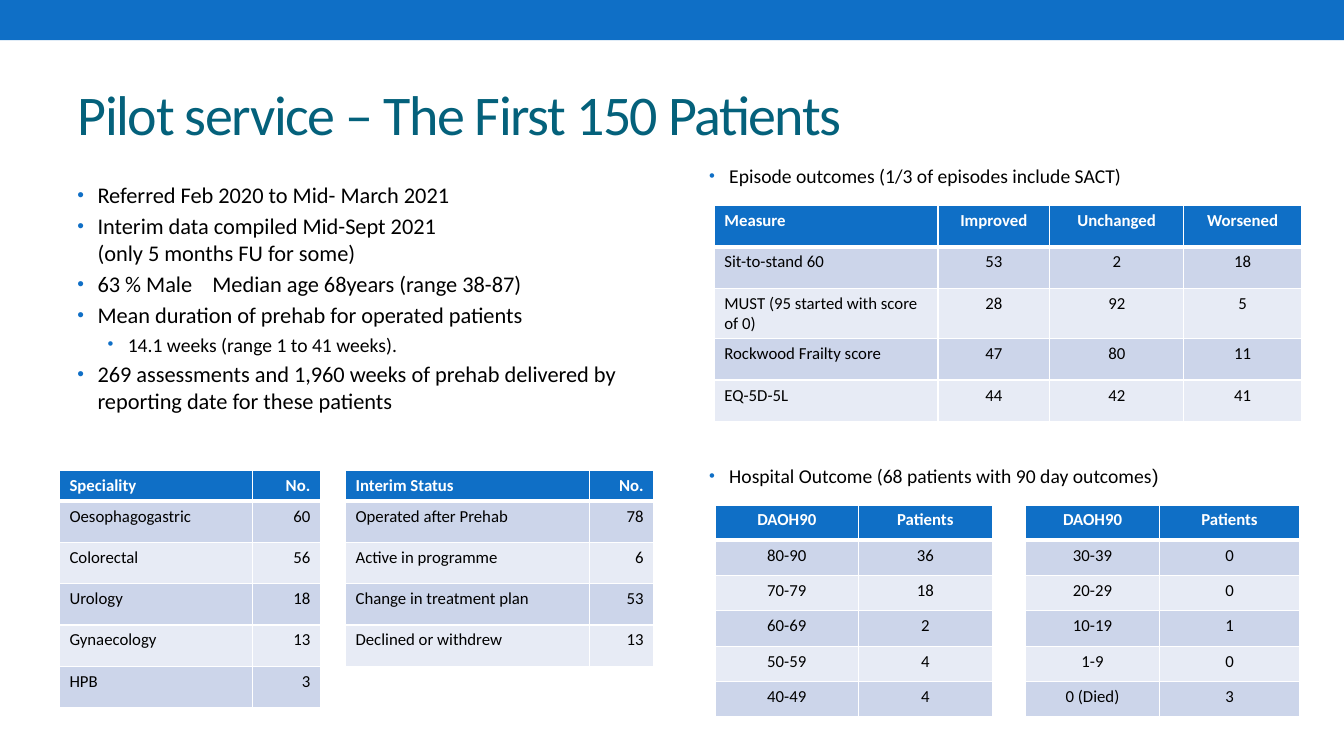
"""Build the slide on the first 150 patients of the pilot service."""
from dataclasses import dataclass

from lxml.etree import SubElement
from pptx import Presentation
from pptx.dml.color import RGBColor
from pptx.enum.shapes import MSO_SHAPE as Shape
from pptx.enum.text import MSO_ANCHOR as Anchor, PP_ALIGN as Align
from pptx.oxml.ns import qn
from pptx.util import Inches, Pt


@dataclass(frozen=True)
class Theme:
    blue: str = "0F6FC6"
    teal: str = "04617B"
    black: str = "000000"
    white: str = "FFFFFF"
    bands: tuple = ("CCD5EA", "E7EBF5")
    font: str = "Calibri"
    bracket_font: str = "Arial"
    title: int = 40
    point: int = 16
    detail: int = 14
    cell: int = 12


theme = Theme()


def write(paragraph, text, size, color=theme.black, bold=False, font=theme.font):
    """Add one formatted run."""
    run = paragraph.add_run()
    run.text = text
    run.font.name = font
    run.font.size = Pt(size)
    run.font.bold = bold
    run.font.color.rgb = RGBColor.from_string(color)
    return run


def set_bullet(paragraph, indent, before):
    """Give a paragraph its hanging bullet and the space above it."""
    paragraph.space_before = Pt(before)
    props = paragraph._p.get_or_add_pPr()
    props.set("marL", str(Inches(indent)))
    props.set("indent", str(Inches(-0.2)))
    SubElement(SubElement(props, qn("a:buClr")), qn("a:srgbClr"), val=theme.blue)
    SubElement(props, qn("a:buSzPct"), val="85000")
    SubElement(props, qn("a:buFont"), typeface=theme.bracket_font)
    SubElement(props, qn("a:buChar"), char="•")
    return props


deck = Presentation()
deck.slide_width, deck.slide_height = Inches(13.34), Inches(7.5)
slide = deck.slides.add_slide(deck.slide_layouts[5])

banner = slide.shapes.add_shape(Shape.RECTANGLE, 0, 0, deck.slide_width, Inches(0.4))
banner.shadow.inherit = False
banner.fill.solid()
banner.fill.fore_color.rgb = RGBColor.from_string(theme.blue)
banner.line.fill.background()

heading = slide.shapes.title
heading.left, heading.top = Inches(0.67), Inches(0.58)
heading.width, heading.height = Inches(12), Inches(1.08)
heading.text_frame.vertical_anchor = Anchor.MIDDLE
heading_line = heading.text_frame.paragraphs[0]
heading_line.alignment = Align.LEFT
heading_run = write(heading_line, "Pilot service – The First 150 Patients", theme.title, theme.teal)
heading_run.font._element.set("spc", "-100")

summary_points = [
    (["Referred Feb 2020 to Mid- March 2021"], 0.2, theme.point),
    (["Interim data compiled Mid-Sept 2021 ", "(only 5 months FU for some)"], 0.2, theme.point),
    (["63 % Male\tMedian age 68years (range 38-87)"], 0.2, theme.point),
    (["Mean duration of prehab for operated patients"], 0.2, theme.point),
    (["14.1 weeks (range 1 to 41 weeks)."], 0.5, theme.detail),
    (["269 assessments and 1,960 weeks of prehab delivered by "
      "reporting date for these patients"], 0.2, theme.point),
]
summary = slide.shapes.add_textbox(Inches(0.67), Inches(1.75), Inches(6.27), Inches(5.33)).text_frame
summary.word_wrap = True
for index, (lines, indent, size) in enumerate(summary_points):
    point = summary.add_paragraph() if index else summary.paragraphs[0]
    point.level = int(indent > 0.2)
    props = set_bullet(point, indent, 3)
    if "\t" in lines[0]:
        SubElement(SubElement(props, qn("a:tabLst")), qn("a:tab"), pos=str(Inches(1.34)), algn="l")
    for number, line in enumerate(lines):
        if number:
            point.add_line_break()
        write(point, line, size)

outcomes = slide.shapes.add_textbox(Inches(6.94), Inches(1.58), Inches(6.14), Inches(5.16)).text_frame
outcomes.word_wrap = True
episode = outcomes.paragraphs[0]
set_bullet(episode, 0.2, 0)
write(episode, "Episode outcomes (1/3 of episodes include SACT)", theme.detail)
hospital = outcomes.add_paragraph()
set_bullet(hospital, 0.2, 197)
write(hospital, "Hospital Outcome (68 patients with 90 day outcomes", theme.detail)
write(hospital, ")", theme.detail, font=theme.bracket_font)

L, C, R = Align.LEFT, Align.CENTER, Align.RIGHT
tables = [
    (0.59, 4.67, [1.92, 0.67, 0.25, 2.42, 0.64], 0.29, 0.41, [L, R, L, L, R], [
        ["Speciality", "No.", "", "Interim Status", "No."],
        ["Oesophagogastric", "60", "", "Operated after Prehab", "78"],
        ["Colorectal", "56", "", "Active in programme", "6"],
        ["Urology", "18", "", "Change in treatment plan", "53"],
        ["Gynaecology", "13", "", "Declined or withdrew", "13"],
        ["HPB", "3", "", "", ""],
    ]),
    (7.09, 2.04, [2.22, 1.11, 1.33, 1.17], 0.41, 0.41, [L, C, C, C], [
        ["Measure", "Improved", "Unchanged", "Worsened"],
        ["Sit-to-stand 60", "53", "2", "18"],
        ["MUST (95 started with score of 0)", "28", "92", "5"],
        ["Rockwood Frailty score", "47", "80", "11"],
        ["EQ-5D-5L", "44", "42", "41"],
    ]),
    (7.1, 5.01, [1.42, 1.33, 0.33, 1.33, 1.39], 0.35, 0.35, [C] * 5, [
        ["DAOH90", "Patients", "", "DAOH90", "Patients"],
        ["80-90", "36", "", "30-39", "0"],
        ["70-79", "18", "", "20-29", "0"],
        ["60-69", "2", "", "10-19", "1"],
        ["50-59", "4", "", "1-9", "0"],
        ["40-49", "4", "", "0 (Died)", "3"],
    ]),
]
for left, top, widths, header_height, row_height, aligns, rows in tables:
    height = header_height + row_height * (len(rows) - 1)
    grid = slide.shapes.add_table(len(rows), len(widths), Inches(left), Inches(top),
                                  Inches(sum(widths)), Inches(height)).table
    for column, width in zip(grid.columns, widths):
        column.width = Inches(width)
    for r, values in enumerate(rows):
        is_header = r == 0
        grid.rows[r].height = Inches(header_height if is_header else row_height)
        for c, value in enumerate(values):
            cell = grid.cell(r, c)
            entry = cell.text_frame.paragraphs[0]
            entry.alignment = aligns[c]
            borders = cell._tc.get_or_add_tcPr()
            for side in ("lnL", "lnR", "lnT", "lnB"):
                thick = (is_header and side == "lnB") or (r == 1 and side == "lnT")
                border = SubElement(borders, qn(f"a:{side}"), w=str(Pt(3 if thick else 1)))
                SubElement(SubElement(border, qn("a:solidFill")), qn("a:srgbClr"), val=theme.white)
            if value:
                cell.fill.solid()
                fill = theme.blue if is_header else theme.bands[(r - 1) % 2]
                cell.fill.fore_color.rgb = RGBColor.from_string(fill)
                write(entry, value, theme.cell, theme.white if is_header else theme.black, is_header)
            else:
                cell.fill.background()
                SubElement(entry._p, qn("a:endParaRPr"), sz=str(theme.cell * 100))

deck.save("out.pptx")
